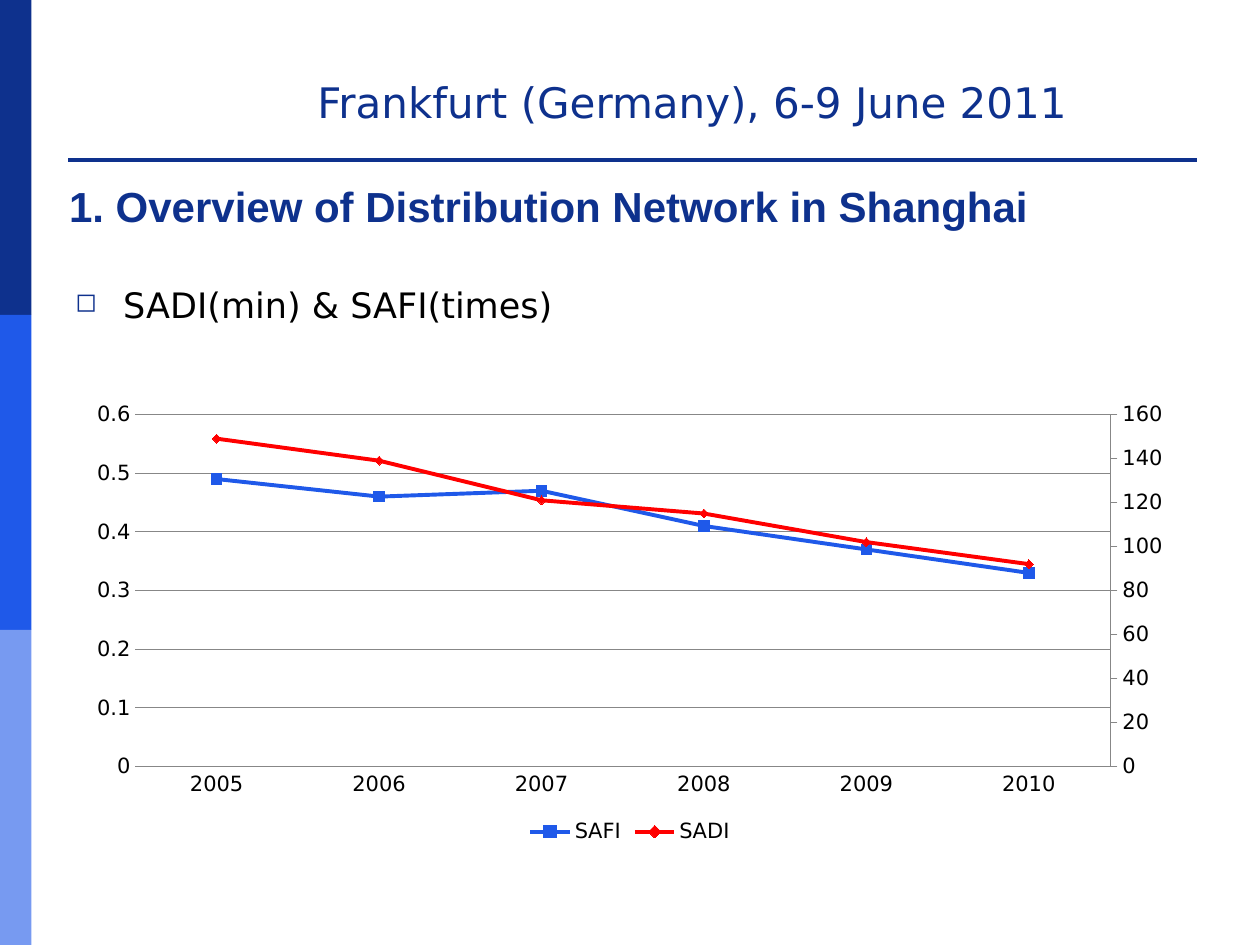
from copy import deepcopy

from lxml.etree import SubElement, fromstring
from pptx import Presentation
from pptx.chart.axis import CategoryAxis, ValueAxis
from pptx.chart.data import CategoryChartData
from pptx.dml.color import RGBColor
from pptx.enum.chart import (XL_CHART_TYPE, XL_LEGEND_POSITION,
                             XL_MARKER_STYLE, XL_TICK_MARK)
from pptx.enum.shapes import MSO_SHAPE
from pptx.enum.text import MSO_ANCHOR
from pptx.oxml.ns import qn
from pptx.util import Inches, Pt

# Content
EVENT = "Frankfurt (Germany), 6-9 June 2011"
TITLE = "1. Overview of Distribution Network in Shanghai"
BULLET = "SADI(min) & SAFI(times)"
YEARS = [2005, 2006, 2007, 2008, 2009, 2010]
INDICES = [
    ("SAFI", [0.49, 0.46, 0.47, 0.41, 0.37, 0.33], "blue", XL_MARKER_STYLE.SQUARE, 6),
    ("SADI", [149, 139, 121, 115, 102, 92], "red", XL_MARKER_STYLE.DIAMOND, 5),
]
PLOT_AREA = {"x": 0.055, "y": 0.047, "w": 0.877, "h": 0.772}
COLORS = {"navy": "0E318D", "blue": "1F59E9", "light": "779AF1",
          "red": "FF0000", "black": "000000", "grid": "878787"}
SANS, HEADING = "DejaVu Sans", "Arial"


def color(name):
    return RGBColor.from_string(COLORS[name])


def add_text(slide, box, text, font_name, size, color_name, bold=False):
    frame = slide.shapes.add_textbox(*map(Inches, box)).text_frame
    frame.word_wrap = True
    frame.text = text
    font = frame.paragraphs[0].runs[0].font
    font.name, font.size, font.bold = font_name, Pt(size), bold
    font.color.rgb = color(color_name)
    return frame


def add_bullet(paragraph):
    properties = paragraph._p.get_or_add_pPr()
    properties.set("marL", str(Inches(0.38)))
    properties.set("indent", str(-Inches(0.38)))
    bullet_color = SubElement(properties, qn("a:buClr"))
    SubElement(bullet_color, qn("a:srgbClr"), val=COLORS["navy"])
    SubElement(properties, qn("a:buSzPct"), val="75000")
    SubElement(properties, qn("a:buChar"), char="◻")


def add_header_rule(slide):
    """One empty table cell whose bottom border is the rule."""
    box = map(Inches, (0.54, 1.07, 8.96, 0.2))
    table = slide.shapes.add_table(1, 1, *box).table
    table.first_row = table.horz_banding = False
    cell = table.cell(0, 0)
    cell.margin_left = cell.margin_right = cell.margin_top = cell.margin_bottom = 0
    cell.text_frame.paragraphs[0].font.size = Pt(8)
    properties = cell._tc.get_or_add_tcPr()
    for side in "LRT":
        SubElement(SubElement(properties, qn(f"a:ln{side}"), w="0"), qn("a:noFill"))
    bottom = SubElement(properties, qn("a:lnB"), w=str(Pt(2.25)))
    SubElement(SubElement(bottom, qn("a:solidFill")), qn("a:srgbClr"), val=COLORS["navy"])
    cell.fill.background()


def set_plot_area(plot_area):
    for old in plot_area.findall(qn("c:layout")):
        plot_area.remove(old)
    layout = fromstring(f'<c:layout xmlns:c="{plot_area.nsmap["c"]}"/>')
    manual = SubElement(layout, qn("c:manualLayout"))
    SubElement(manual, qn("c:layoutTarget"), val="inner")
    for side in "xy":
        SubElement(manual, qn(f"c:{side}Mode"), val="edge")
    for side, share in PLOT_AREA.items():
        SubElement(manual, qn(f"c:{side}"), val=str(share))
    plot_area.insert(0, layout)


def move_last_series_to_right_axis(plot_area):
    """Split the line plot in two and give the second its own axes."""
    left_plot = plot_area.find(qn("c:lineChart"))
    right_plot = deepcopy(left_plot)
    left_plot.remove(left_plot.findall(qn("c:ser"))[-1])
    right_plot.remove(right_plot.findall(qn("c:ser"))[0])
    left_plot.addnext(right_plot)

    category_id, value_id = "50010", "50020"
    for axis_id, new_id in zip(right_plot.findall(qn("c:axId")), (category_id, value_id)):
        axis_id.set("val", new_id)
    right_axes = []
    for tag, own, other in (("c:valAx", value_id, category_id),
                            ("c:catAx", category_id, value_id)):
        axis = deepcopy(plot_area.find(qn(tag)))
        axis.find(qn("c:axId")).set("val", own)
        axis.find(qn("c:crossAx")).set("val", other)
        right_axes.append(axis)
    value_element, category_element = right_axes
    plot_area.find(qn("c:valAx")).addnext(value_element)
    value_element.addnext(category_element)
    value_element.find(qn("c:axPos")).set("val", "r")
    value_element.find(qn("c:crosses")).set("val", "max")
    CategoryAxis(category_element).visible = False
    return ValueAxis(value_element)


def format_value_axis(axis, maximum, step):
    axis.minimum_scale, axis.maximum_scale, axis.major_unit = 0, maximum, step
    axis.tick_labels.number_format = "General"
    axis.tick_labels.number_format_is_linked = False


def draw_thin_line(part):
    part.format.line.color.rgb = color("grid")
    part.format.line.width = Pt(0.5)


def add_index_chart(slide):
    data = CategoryChartData()
    data.categories = YEARS
    for name, values, *_ in INDICES:
        data.add_series(name, values)
    box = map(Inches, (0.59, 3.12, 8.82, 3.62))
    chart = slide.shapes.add_chart(XL_CHART_TYPE.LINE_MARKERS, *box, data).chart
    chart.has_title = False
    chart.font.name, chart.font.size = SANS, Pt(12)
    chart.font.color.rgb = color("black")
    chart.has_legend = True
    chart.legend.position = XL_LEGEND_POSITION.BOTTOM
    chart.legend.include_in_layout = False
    chart.plots[0].vary_by_categories = False

    # Lines and markers
    for series, (_, _, color_name, marker_style, marker_size) in zip(chart.series, INDICES):
        series.smooth = False
        series.format.line.color.rgb = color(color_name)
        series.format.line.width = Pt(2.25)
        series.marker.style, series.marker.size = marker_style, marker_size
        series.marker.format.fill.solid()
        series.marker.format.fill.fore_color.rgb = color(color_name)
        series.marker.format.line.color.rgb = color(color_name)

    # Axes
    years_axis, safi_axis = chart.category_axis, chart.value_axis
    for axis in (years_axis, safi_axis):
        axis.major_tick_mark = axis.minor_tick_mark = XL_TICK_MARK.NONE
    plot_area = chart._chartSpace.chart.plotArea
    set_plot_area(plot_area)
    sadi_axis = move_last_series_to_right_axis(plot_area)
    format_value_axis(safi_axis, 0.6, 0.1)
    format_value_axis(sadi_axis, 160, 20)
    for part in (years_axis, sadi_axis, safi_axis.major_gridlines):
        draw_thin_line(part)
    safi_axis.format.line.fill.background()
    sadi_axis.has_major_gridlines = False
    sadi_axis.major_tick_mark = XL_TICK_MARK.OUTSIDE


def main():
    deck = Presentation()
    deck.slide_width, deck.slide_height = Inches(10), Inches(7.5)
    slide = deck.slides.add_slide(deck.slide_layouts[6])

    # Side band
    for row, color_name in enumerate(("navy", "blue", "light")):
        band = slide.shapes.add_shape(MSO_SHAPE.RECTANGLE, 0, Inches(2.5 * row),
                                      Inches(0.25), Inches(2.5))
        band.shadow.inherit = False
        band.fill.solid()
        band.fill.fore_color.rgb = color(color_name)
        band.line.fill.background()

    # Header and rule
    add_header_rule(slide)
    add_text(slide, (2.42, 0.56, 6.58, 0.5), EVENT, SANS, 24, "navy")

    # Title and bullet
    title = add_text(slide, (0.45, 1.31, 9, 0.65), TITLE, HEADING, 24, "navy", bold=True)
    title.vertical_anchor = MSO_ANCHOR.MIDDLE
    body = add_text(slide, (0.5, 2.2, 9, 4.51), BULLET, SANS, 20, "black")
    add_bullet(body.paragraphs[0])

    add_index_chart(slide)
    deck.save("out.pptx")


if __name__ == "__main__":
    main()
